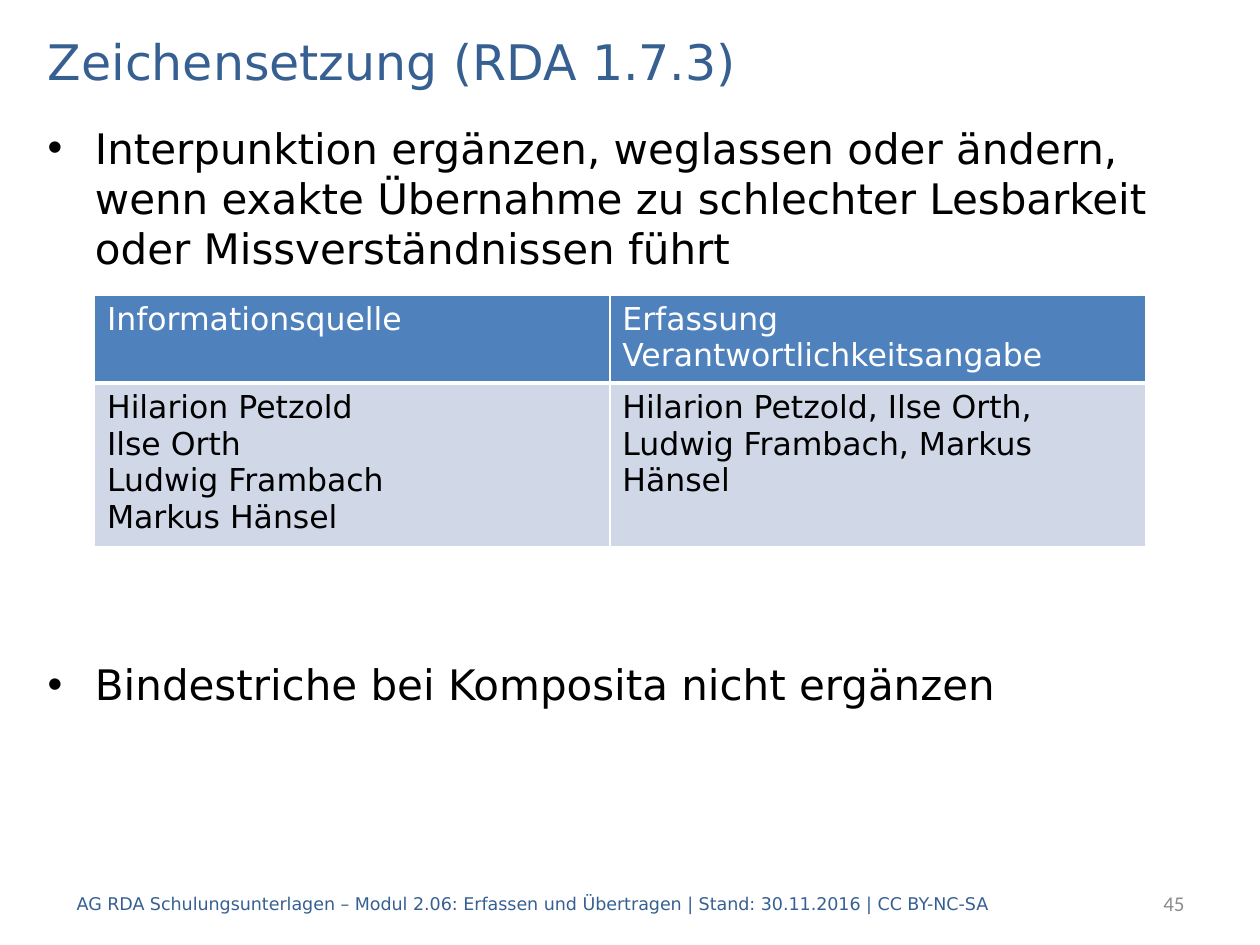
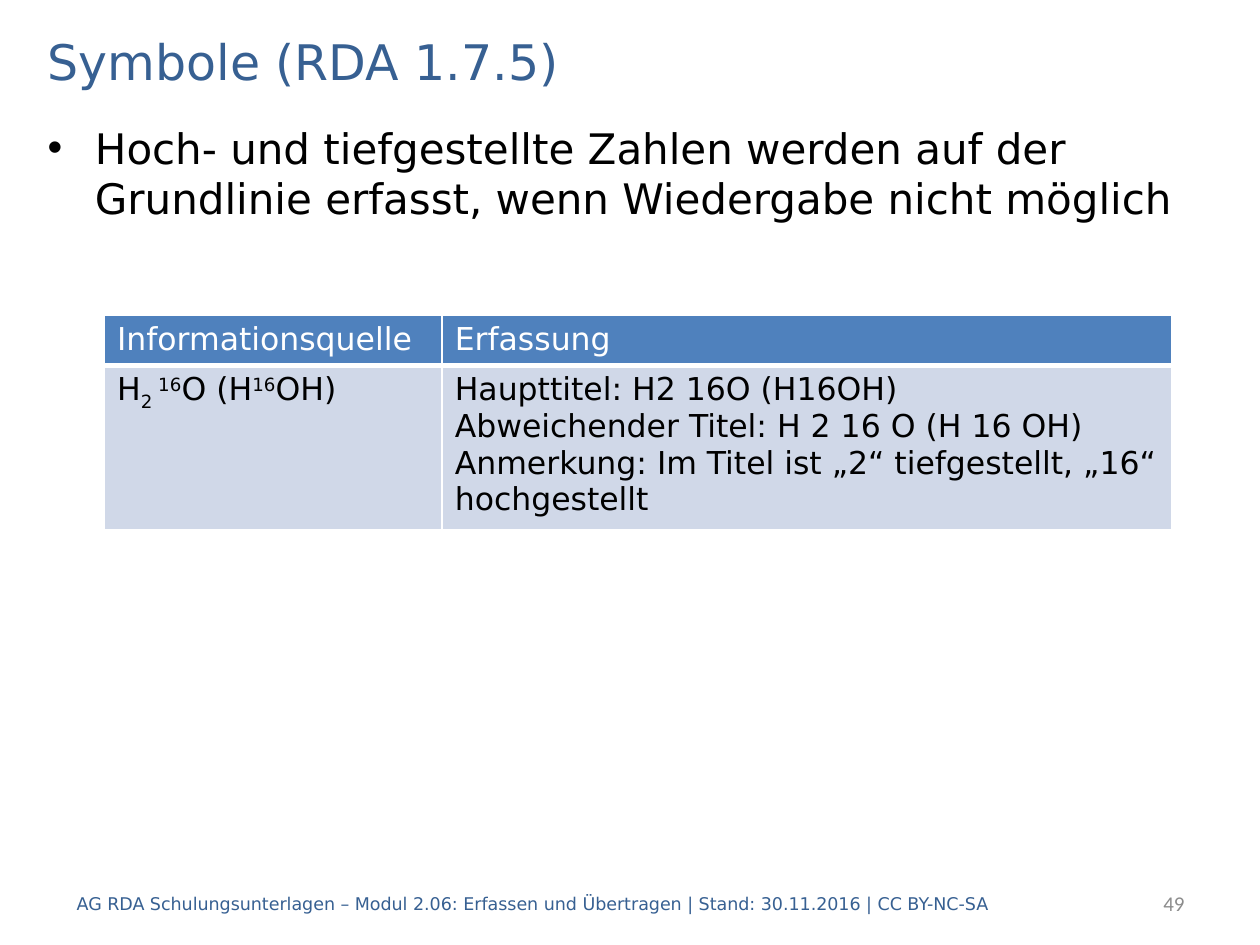
from lxml import etree
from pptx import Presentation
from pptx.dml.color import RGBColor
from pptx.enum.text import MSO_ANCHOR, MSO_AUTO_SIZE, PP_ALIGN
from pptx.oxml.ns import qn
from pptx.util import Inches, Pt

LEFT, RIGHT = PP_ALIGN.LEFT, PP_ALIGN.RIGHT
TOP, MIDDLE = MSO_ANCHOR.TOP, MSO_ANCHOR.MIDDLE
NO_AUTOFIT = MSO_AUTO_SIZE.NONE
TITLE_ONLY = 5

BLACK = RGBColor(0x00, 0x00, 0x00)
WHITE = RGBColor(0xFF, 0xFF, 0xFF)
GREY = RGBColor(0x8C, 0x8C, 0x8C)
NAVY = RGBColor(0x37, 0x60, 0x92)
HEADER_BLUE = RGBColor(0x4F, 0x81, 0xBD)
BODY_BLUE = RGBColor(0xD0, 0xD8, 0xE8)

COLUMNS, ROWS = 100, 75
SUB, SUPER = -25000, 30000
FOOTER = ("AG RDA Schulungsunterlagen – Modul 2.06: Erfassen und Übertragen"
          " | Stand: 30.11.2016 | CC BY-NC-SA")


class Deck:
    """Shared style plus the page being filled; lengths are grid units."""
    text_font, number_font = "DejaVu Sans", "Calibri"
    title_size, bullet_size, table_size = 28, 24, 18
    footer_size, number_size = 10, 12

    def __init__(self):
        self.file = Presentation()
        self.file.slide_width = Inches(10)
        self.file.slide_height = Inches(7.5)
        self.page = None

    def x(self, columns):
        return round(self.file.slide_width * columns / COLUMNS)

    def y(self, rows):
        return round(self.file.slide_height * rows / ROWS)

    def area(self, left, top, width, height):
        return self.x(left), self.y(top), self.x(width), self.y(height)

    def style(self, frame, size, color, align=LEFT, font=None):
        for para in frame.paragraphs:
            para.alignment = align
            for span in para.runs:
                span.font.name = font or self.text_font
                span.font.size = Pt(size)
                span.font.color.rgb = color

    def new_page(self, title, number):
        self.page = self.file.slides.add_slide(self.file.slide_layouts[TITLE_ONLY])
        box = self.page.shapes.title
        box.left, box.top, box.width, box.height = self.area(2.8, 2, 94.5, 5.6)
        frame = box.text_frame
        frame.text = title
        frame.auto_size = NO_AUTOFIT
        frame.vertical_anchor = MIDDLE
        self.style(frame, self.title_size, NAVY)
        self.text(FOOTER, (5.1, 69.7, 83.5, 4), self.footer_size, NAVY, MIDDLE)
        self.text(number, (79.1, 69.7, 15.9, 4), self.number_size, GREY, MIDDLE,
                  RIGHT, self.number_font)

    def text(self, words, place, size, color, anchor=TOP, align=LEFT, font=None):
        frame = self.page.shapes.add_textbox(*self.area(*place)).text_frame
        frame.word_wrap = True
        frame.vertical_anchor = anchor
        frame.text = words
        self.style(frame, size, color, align, font)
        return frame

    def bullets(self, lines, gap=0):
        """Bulleted text; gap is the space in points between two bullets."""
        frame = self.text("\n".join(lines), (2.8, 9.2, 94.5, 59.8),
                          self.bullet_size, BLACK)
        indent = self.x(3.75)
        for index, para in enumerate(frame.paragraphs):
            para.space_before = Pt(gap if index else 0)
            properties = para._p.get_or_add_pPr()
            properties.set("marL", str(indent))
            properties.set("indent", str(-indent))
            etree.SubElement(properties, qn("a:buFont"), typeface="Arial")
            etree.SubElement(properties, qn("a:buChar"), char="•")

    def table(self, left, top, widths, heights, content):
        """Content is rows of cells, a cell is lines, a line is text or spans."""
        place = self.area(left, top, sum(widths), sum(heights))
        table = self.page.shapes.add_table(len(heights), len(widths), *place).table
        for column, width in zip(table.columns, widths):
            column.width = self.x(width)
        for index, (row, height, cells) in enumerate(zip(table.rows, heights, content)):
            row.height = self.y(height)
            for cell, lines in zip(row.cells, cells):
                self.fill_cell(cell, lines, is_header=index == 0)

    def fill_cell(self, cell, lines, is_header):
        frame = cell.text_frame
        for index, line in enumerate(lines):
            para = frame.add_paragraph() if index else frame.paragraphs[0]
            for words, baseline in [(line, 0)] if isinstance(line, str) else line:
                span = para.add_run()
                span.text = words
                if baseline:
                    span.font._element.set("baseline", str(baseline))
                span.font.bold = False
        self.style(frame, self.table_size, WHITE if is_header else BLACK)
        for side in "LRTB":
            self.border(cell, side, 3 if is_header and side == "B" else 1)
        cell.fill.solid()
        cell.fill.fore_color.rgb = HEADER_BLUE if is_header else BODY_BLUE

    def border(self, cell, side, width):
        properties = cell._tc.get_or_add_tcPr()
        line = etree.SubElement(properties, qn("a:ln" + side), w=str(Pt(width)))
        fill = etree.SubElement(line, qn("a:solidFill"))
        etree.SubElement(fill, qn("a:srgbClr"), val=str(WHITE))


def punctuation_page(deck):
    deck.new_page("Zeichensetzung (RDA 1.7.3)", "45")
    deck.bullets([
        "Interpunktion ergänzen, weglassen oder ändern, wenn exakte Übernahme "
        "zu schlechter Lesbarkeit oder Missverständnissen führt",
        "Bindestriche bei Komposita nicht ergänzen",
    ], gap=220)
    names = ["Hilarion Petzold", "Ilse Orth", "Ludwig Frambach", "Markus Hänsel"]
    deck.table(7.5, 23.4, [40.9, 42.5], [6.7, 12.6], [
        [["Informationsquelle"], ["Erfassung Verantwortlichkeitsangabe"]],
        [names, [", ".join(names)]],
    ])


def symbols_page(deck):
    deck.new_page("Symbole (RDA 1.7.5)", "49")
    deck.bullets(["Hoch- und tiefgestellte Zahlen werden auf der Grundlinie "
                  "erfasst, wenn Wiedergabe nicht möglich"])
    formula = [("H", 0), ("2 ", SUB), ("16", SUPER), ("O (H", 0),
               ("16", SUPER), ("OH)", 0)]
    deck.table(8.3, 25, [26.8, 57.9], [4, 12.5], [
        [["Informationsquelle"], ["Erfassung"]],
        [[formula], ["Haupttitel: H2 16O (H16OH)",
                     "Abweichender Titel: H 2 16 O (H 16 OH)",
                     "Anmerkung: Im Titel ist „2“ tiefgestellt, „16“ hochgestellt"]],
    ])


def main():
    deck = Deck()
    punctuation_page(deck)
    symbols_page(deck)
    deck.file.save("out.pptx")


if __name__ == "__main__":
    main()
